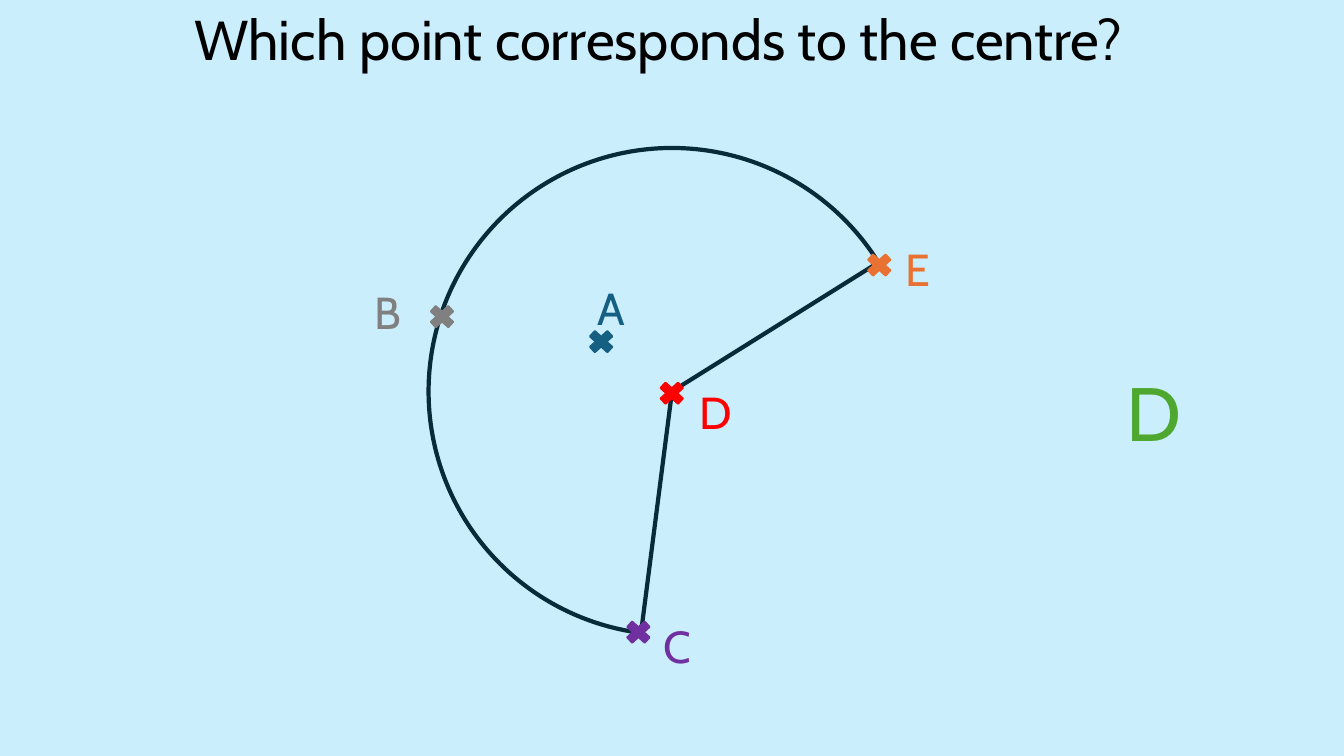
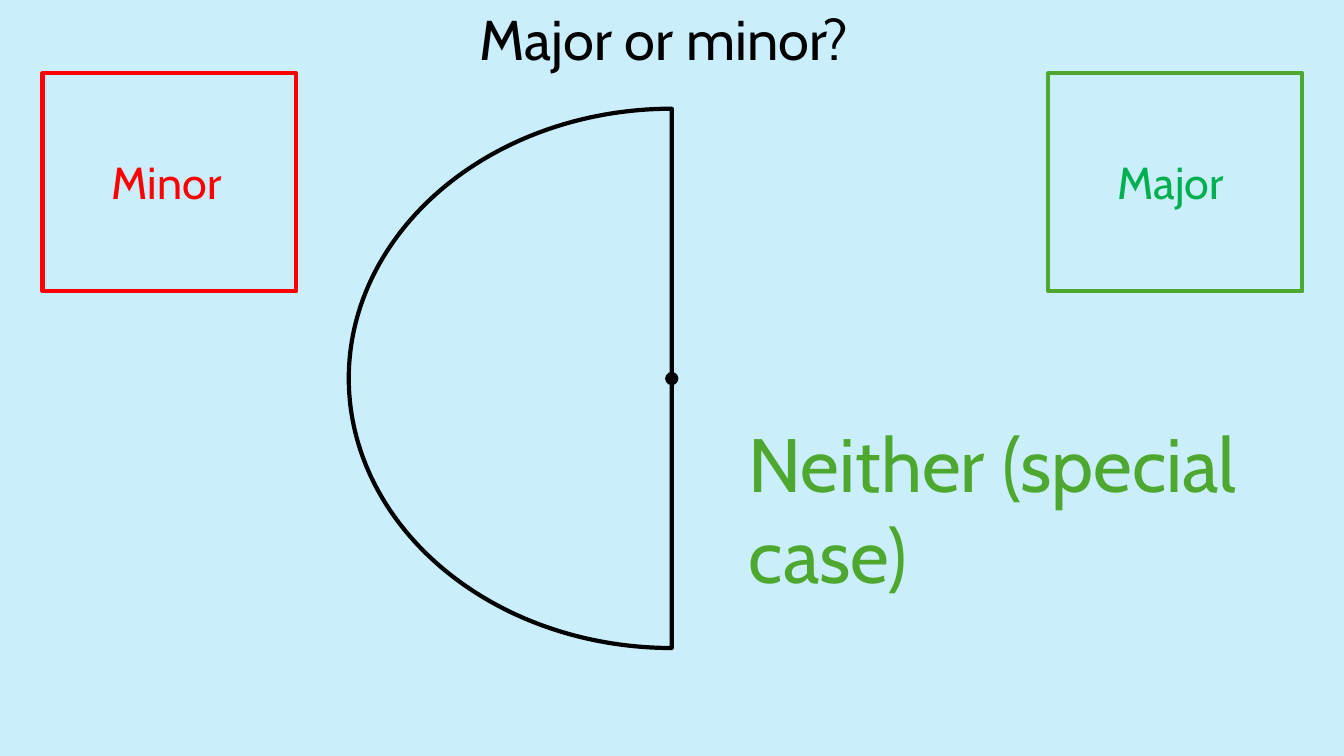
"""Build two quiz slides about the centre of a sector and major or minor sectors."""
from dataclasses import dataclass

from pptx import Presentation
from pptx.dml.color import RGBColor
from pptx.enum.shapes import MSO_SHAPE
from pptx.enum.text import MSO_AUTO_SIZE
from pptx.util import Cm, Pt


@dataclass(frozen=True)
class Theme:
    font: str = "Cabin"
    background: str = "CAEEFB"
    black: str = "000000"
    navy: str = "092A39"
    red: str = "FF0000"
    orange: str = "E97132"
    purple: str = "7030A0"
    grey: str = "808080"
    blue: str = "156082"
    green: str = "4EA72E"
    bright_green: str = "00B050"
    title_size: int = 40
    label_size: int = 32
    answer_size: int = 54
    outline: float = 3
    thin_outline: float = 1.5


theme = Theme()


def add_text(page, text, left, top, width, height, size, color):
    box = page.shapes.add_textbox(Cm(left), Cm(top), Cm(width), Cm(height))
    frame = box.text_frame
    frame.word_wrap = True
    frame.auto_size = MSO_AUTO_SIZE.SHAPE_TO_FIT_TEXT
    span = frame.paragraphs[0].add_run()
    span.text = text
    span.font.name = theme.font
    span.font.size = Pt(size)
    span.font.color.rgb = RGBColor.from_string(color)


def add_figure(page, kind, left, top, width, height, color, filled=False):
    figure = page.shapes.add_shape(kind, Cm(left), Cm(top), Cm(width), Cm(height))
    figure.shadow.inherit = False
    figure.line.color.rgb = RGBColor.from_string(color)
    figure.line.width = Pt(theme.thin_outline if filled else theme.outline)
    if filled:
        figure.fill.solid()
        figure.fill.fore_color.rgb = RGBColor.from_string(color)
    else:
        figure.fill.background()
    return figure


deck = Presentation()
deck.slide_width, deck.slide_height = Cm(33.87), Cm(19.05)
master_fill = deck.slide_master.background.fill
master_fill.solid()
master_fill.fore_color.rgb = RGBColor.from_string(theme.background)

titles = [
    ("Which point corresponds to the centre?", 4.65, 24.59),
    ("Major or minor?", 11.84, 10.19),
]
pages = []
for title, left, width in titles:
    page = deck.slides.add_slide(deck.slide_layouts[6])
    add_text(page, title, left, 0, width, 1.96, theme.title_size, theme.black)
    pages.append(page)
centre_page, sector_page = pages

sector = add_figure(centre_page, MSO_SHAPE.PIE, 10.8, 3.73, 12.27, 12.27, theme.navy)
sector.adjustments[0], sector.adjustments[1] = 23.59, 162
sector.rotation = 58

cross_width, cross_height = 0.84, 0.76
points = [
    ("D", theme.red, (16.93, 9.91), (17.37, 9.58)),
    ("E", theme.orange, (22.16, 6.68), (22.58, 5.97)),
    ("C", theme.purple, (16.09, 15.93), (16.46, 15.47)),
    ("B", theme.grey, (11.14, 7.98), (9.19, 7.06)),
    ("A", theme.blue, (15.15, 8.61), (14.81, 6.96)),
]
for letter, color, (x, y), (label_left, label_top) in points:
    add_figure(centre_page, MSO_SHAPE.MATH_MULTIPLY, x - cross_width / 2,
               y - cross_height / 2, cross_width, cross_height, color, filled=True)
    add_text(centre_page, letter, label_left, label_top, 1.45, 1.63,
             theme.label_size, color)
add_text(centre_page, "D", 28.14, 9.09, 2.16, 2.57, theme.answer_size, theme.green)

semicircle = add_figure(sector_page, MSO_SHAPE.PIE, 8.79, 2.74, 16.28, 13.59, theme.black)
semicircle.adjustments[0], semicircle.adjustments[1] = 54, 162

choices = [
    ("Minor", 1.07, theme.red, theme.red),
    ("Major", 26.42, theme.green, theme.bright_green),
]
for choice, left, line_color, text_color in choices:
    add_figure(sector_page, MSO_SHAPE.RECTANGLE, left, 1.85, 6.4, 5.49, line_color)
    add_text(sector_page, choice, left + 1.5, 3.78, 3.38, 1.63,
             theme.label_size, text_color)
add_text(sector_page, "Neither (special case)", 18.62, 10.39, 12.9, 4.88,
         theme.answer_size, theme.green)
add_figure(sector_page, MSO_SHAPE.OVAL, 16.79, 9.4, 0.28, 0.28, theme.black, filled=True)

deck.save("out.pptx")
